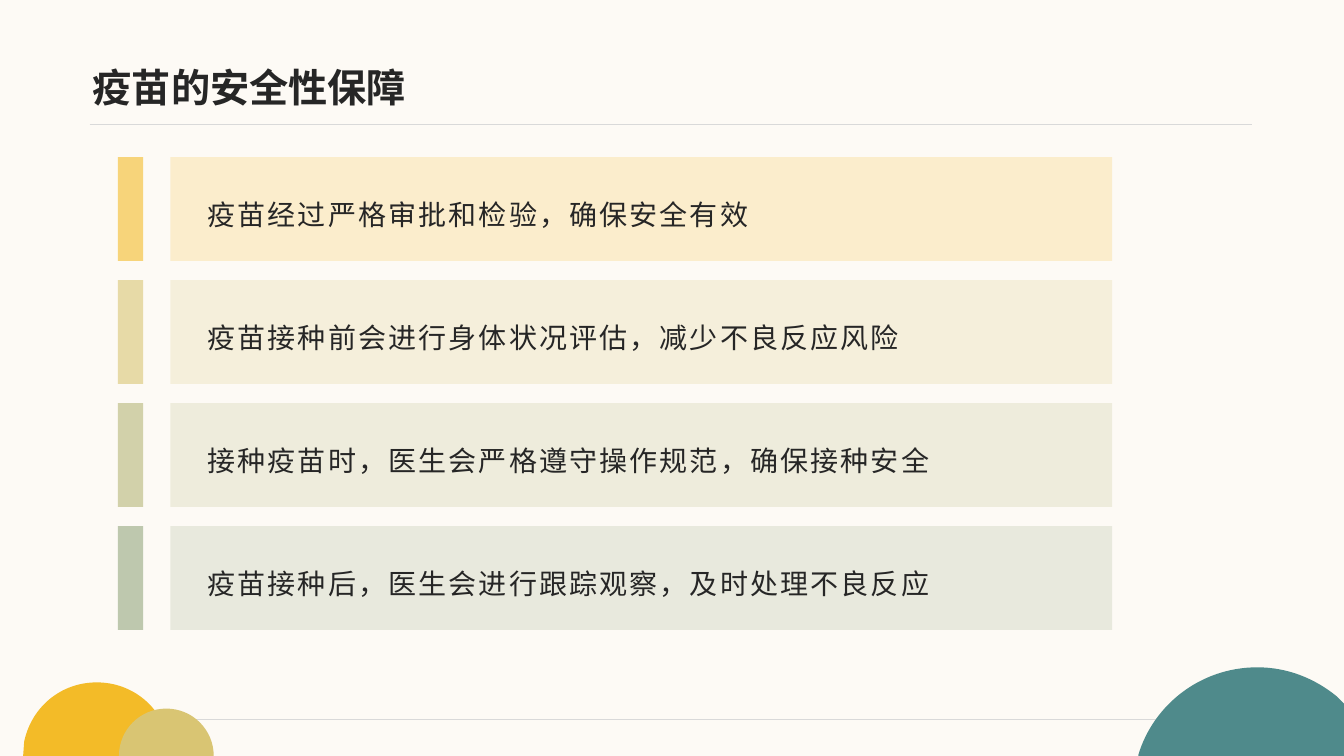
from lxml import etree
from pptx import Presentation
from pptx.dml.color import RGBColor
from pptx.enum.shapes import MSO_CONNECTOR, MSO_SHAPE
from pptx.enum.text import MSO_ANCHOR
from pptx.oxml.ns import qn
from pptx.util import Inches, Pt

RECTANGLE = MSO_SHAPE.RECTANGLE
STRAIGHT = MSO_CONNECTOR.STRAIGHT
MIDDLE = MSO_ANCHOR.MIDDLE

CJK_FONT = "Noto Sans CJK SC"
INK = "262626"
RULE = "D9D9D9"
YELLOW, KHAKI, TEAL = "F3BB28", "D9C573", "4F8A8B"
SAFEGUARDS = [
    ("疫苗经过严格审批和检验，确保安全有效", YELLOW),
    ("疫苗接种前会进行身体状况评估，减少不良反应风险", KHAKI),
    ("接种疫苗时，医生会严格遵守操作规范，确保接种安全", "B6B679"),
    ("疫苗接种后，医生会进行跟踪观察，及时处理不良反应", "94A87F"),
]
FIRST_TOP, PITCH, BAND_HEIGHT = 1.56, 1.22, 1.03

YELLOW_CAP = [
    [(0.96, 6.77)],
    [(1.32, 6.77), (1.61, 7.02), (1.68, 7.36)],
    [(1.69, 7.5)], [(0.23, 7.5)], [(0.24, 7.36)],
    [(0.31, 7.02), (0.6, 6.77), (0.96, 6.77)],
]
KHAKI_CAP = [
    [(1.65, 7.03)],
    [(1.39, 7.03), (1.18, 7.24), (1.18, 7.5)],
    [(2.12, 7.5)],
    [(2.12, 7.24), (1.91, 7.03), (1.65, 7.03)],
]
TEAL_CAP = [
    [(12.47, 6.62)],
    [(12.77, 6.62), (13.04, 6.73), (13.26, 6.91)],
    [(13.33, 6.98)], [(13.33, 7.5)], [(11.29, 7.5)], [(11.29, 7.49)],
    [(11.44, 6.99), (11.91, 6.62), (12.47, 6.62)],
]


def rgb(value):
    return RGBColor.from_string(value)


def paint(shape, color, opacity=100):
    shape.shadow.inherit = False
    shape.fill.solid()
    shape.fill.fore_color.rgb = rgb(color)
    shape.line.fill.background()
    if opacity < 100:
        tint = shape.fill._xPr.find(qn("a:solidFill"))[0]
        etree.SubElement(tint, qn("a:alpha"), val=str(opacity * 1000))


def add_bar(slide, left, top, width, color, opacity):
    bar = slide.shapes.add_shape(
        RECTANGLE, Inches(left), Inches(top), Inches(width), Inches(BAND_HEIGHT))
    paint(bar, color, opacity)


def add_rule(slide, left, right, y):
    rule = slide.shapes.add_connector(
        STRAIGHT, Inches(left), Inches(y), Inches(right), Inches(y))
    rule.line.color.rgb = rgb(RULE)
    rule.line.width = Pt(0.5)
    etree.SubElement(rule._element.spPr, qn("a:effectLst"))


def add_circle_cap(slide, segments, color):
    points = [(Inches(x), Inches(y)) for segment in segments for x, y in segment]
    builder = slide.shapes.build_freeform(*points[0])
    builder.add_line_segments(points[1:], close=True)
    cap = builder.convert_to_shape()
    steps = iter(list(cap._element.iter(qn("a:lnTo"))))
    for segment in segments[1:]:
        first, *others = [next(steps) for _ in segment]
        if others:
            first.tag = qn("a:cubicBezTo")
            for step in others:
                first.append(step[0])
                step.getparent().remove(step)
    paint(cap, color)


def add_text(slide, text, left, top, width, height, *, size, font=CJK_FONT,
             bold=False, spacing=0, line_spacing=1.0, inset_x=0.1, inset_y=0.05):
    box = slide.shapes.add_textbox(
        Inches(left), Inches(top), Inches(width), Inches(height))
    frame = box.text_frame
    frame.word_wrap = True
    frame.vertical_anchor = MIDDLE
    frame.margin_left = frame.margin_right = Inches(inset_x)
    frame.margin_top = frame.margin_bottom = Inches(inset_y)
    paragraph = frame.paragraphs[0]
    paragraph.line_spacing = line_spacing
    run = paragraph.add_run()
    run.text = text
    run.font.size = Pt(size)
    run.font.bold = bold
    run.font.name = font
    run.font.color.rgb = rgb(INK)
    properties = run._r.get_or_add_rPr()
    properties.set("lang", "zh-CN")
    properties.set("spc", str(int(spacing * 100)))
    etree.SubElement(properties, qn("a:ea"), typeface=CJK_FONT)


def add_safeguard(slide, top, text, color):
    add_bar(slide, 1.69, top, 9.34, color, 20)
    add_bar(slide, 1.17, top, 0.25, color, 60)
    add_text(slide, text, 1.96, top + 0.09, 8.94, 0.85,
             size=20, spacing=1.5, line_spacing=1.3)


def main():
    deck = Presentation()
    deck.slide_width, deck.slide_height = Inches(13.33), Inches(7.5)
    slide = deck.slides.add_slide(deck.slide_layouts[6])
    slide.background.fill.solid()
    slide.background.fill.fore_color.rgb = rgb("FDFAF5")

    add_rule(slide, 0.89, 12.42, 1.23)
    add_circle_cap(slide, YELLOW_CAP, YELLOW)
    add_rule(slide, 1.69, 11.55, 7.14)
    add_circle_cap(slide, KHAKI_CAP, KHAKI)
    add_circle_cap(slide, TEAL_CAP, TEAL)

    add_text(slide, "疫苗的安全性保障", 0.92, 0.39, 11.5, 0.94,
             size=28, font="Arial", bold=True, inset_x=0, inset_y=0)
    for index, (text, color) in enumerate(SAFEGUARDS):
        add_safeguard(slide, FIRST_TOP + index * PITCH, text, color)

    deck.save("out.pptx")


if __name__ == "__main__":
    main()
